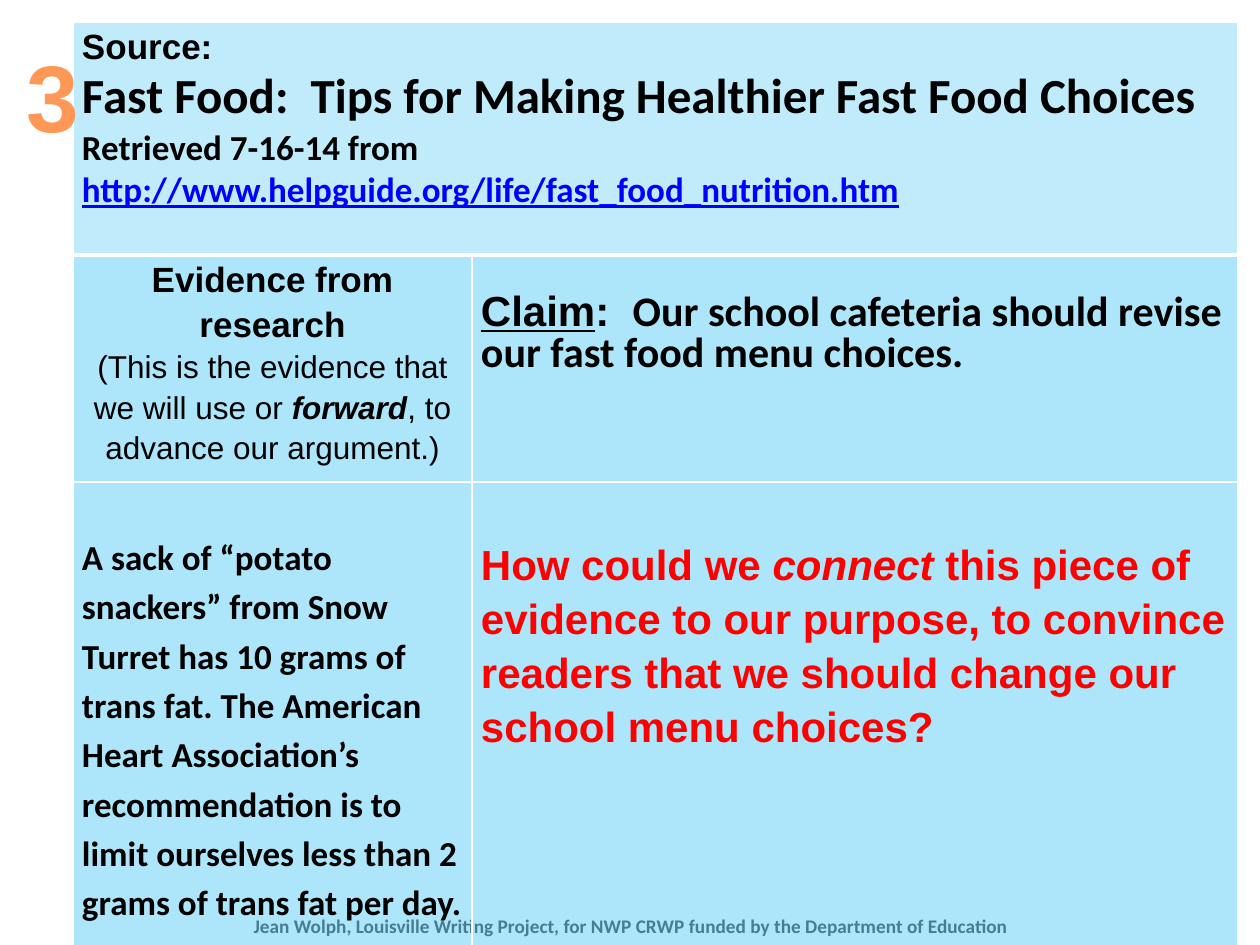
from dataclasses import dataclass

from lxml import etree
from pptx import Presentation
from pptx.dml.color import RGBColor
from pptx.enum import text
from pptx.oxml import ns
from pptx.util import Emu, Pt

PX_PER_INCH = 126
BLACK, WHITE, RED, LINK_BLUE = "000000", "FFFFFF", "FF0000", "0000FF"
SKY, GREY, ORANGE = "00B0F0", "666666", "FF9856"
CENTER, LEFT = text.PP_ALIGN.CENTER, text.PP_ALIGN.LEFT


@dataclass
class Run:
    words: str
    size: int
    font: str = "Arial"
    color: str = BLACK
    bold: bool = True
    italic: bool = False
    underline: bool = False


@dataclass
class Para:
    runs: list[Run]
    align: text.PP_ALIGN = LEFT
    spacing: float = 1.0


@dataclass
class CellSpec:
    row: int
    column: int
    paragraphs: list[Para]
    top_margin: int = 0
    opacity: int = 32
    bottom_line: int = 1


def px(length: int) -> Emu:
    return Emu(round(length * 914400 / PX_PER_INCH))


def rgb(color: str) -> RGBColor:
    return RGBColor.from_string(color)


def write(text_frame, paragraphs: list[Para]) -> None:
    text_frame.word_wrap = True
    for index, item in enumerate(paragraphs):
        paragraph = text_frame.paragraphs[0] if index == 0 else text_frame.add_paragraph()
        paragraph.alignment = item.align
        paragraph.line_spacing = item.spacing
        for part in item.runs:
            run = paragraph.add_run()
            run.text = part.words
            font = run.font
            font.name, font.size = part.font, Pt(part.size)
            font.bold, font.italic, font.underline = part.bold, part.italic, part.underline
            font.color.rgb = rgb(part.color)


def add_text(slide, box: tuple[int, int, int, int], paragraph: Para, inset: int | None = None) -> None:
    text_frame = slide.shapes.add_textbox(*map(px, box)).text_frame
    if inset is not None:
        text_frame.margin_left = text_frame.margin_right = px(inset)
        text_frame.margin_top = text_frame.margin_bottom = px(inset)
    write(text_frame, [paragraph])


def set_borders(cell, bottom_line: int) -> None:
    properties = cell._tc.get_or_add_tcPr()
    widths = {"a:lnL": 1, "a:lnR": 1, "a:lnT": 1, "a:lnB": bottom_line}
    for position, (tag, width) in enumerate(widths.items()):
        line = etree.Element(ns.qn(tag), w=str(Pt(width)))
        fill = etree.SubElement(line, ns.qn("a:solidFill"))
        etree.SubElement(fill, ns.qn("a:srgbClr"), val=WHITE)
        properties.insert(position, line)


def style_cell(cell, opacity: int, bottom_line: int) -> None:
    cell.margin_left = cell.margin_right = px(9)
    cell.margin_top = cell.margin_bottom = 0
    cell.fill.solid()
    cell.fill.fore_color.rgb = rgb(SKY)
    color = cell._tc.tcPr.find(".//" + ns.qn("a:srgbClr"))
    etree.SubElement(color, ns.qn("a:alpha"), val=str(opacity * 1000))
    set_borders(cell, bottom_line)


CELLS = [
    # Source
    CellSpec(0, 0, [
        Para([Run("Source:", 20)], spacing=1.15),
        Para([Run("Fast Food:  Tips for Making Healthier Fast Food Choices", 28, "Calibri")]),
        Para([Run("Retrieved 7-16-14 from ", 20, "Calibri"),
              Run("http://www.helpguide.org/life/fast_food_nutrition.htm", 20, "Calibri",
                  LINK_BLUE, underline=True)]),
    ], opacity=25, bottom_line=3),
    # Column headings
    CellSpec(1, 0, [
        Para([Run("Evidence from research", 20)], CENTER, 1.15),
        Para([Run("(This is the evidence that we will use or ", 18, bold=False),
              Run("forward", 18, italic=True),
              Run(", to advance our argument.)", 18, bold=False)], CENTER, 1.15),
    ]),
    CellSpec(1, 1, [
        Para([Run("Claim", 24, underline=True), Run(":  ", 24),
              Run("Our school cafeteria should revise our fast food menu choices.", 24, "Calibri")],
             spacing=0.8),
    ], top_margin=39),
    # Evidence and question
    CellSpec(2, 0, [
        Para([Run("A sack of “potato snackers” from Snow Turret has 10 grams of trans fat. "
                  "The American Heart Association’s recommendation is to limit ourselves "
                  "less than 2 grams of trans fat per day.", 20, "Calibri")], spacing=1.15),
    ], top_margin=49),
    CellSpec(2, 1, [
        Para([Run("How could we ", 24, color=RED), Run("connect", 24, color=RED, italic=True),
              Run(" this piece of evidence to our purpose, to convince readers that we should "
                  "change our school menu choices?", 24, color=RED)], spacing=1.15),
    ], top_margin=54),
]


def add_evidence_table(slide) -> None:
    columns, rows = [399, 766], [233, 226, 464]
    frame = slide.shapes.add_table(len(rows), len(columns), px(73), px(22),
                                   px(sum(columns)), px(sum(rows)))
    table = frame.table
    table.first_row = table.horz_banding = False
    for column, width in zip(table.columns, columns):
        column.width = px(width)
    for row, height in zip(table.rows, rows):
        row.height = px(height)
    table.cell(0, 0).merge(table.cell(0, 1))
    for item in CELLS:
        cell = table.cell(item.row, item.column)
        style_cell(cell, item.opacity, item.bottom_line)
        cell.margin_top = px(item.top_margin)
        write(cell.text_frame, item.paragraphs)


def main() -> None:
    presentation = Presentation()
    presentation.slide_width, presentation.slide_height = px(1260), px(945)
    slide = presentation.slides.add_slide(presentation.slide_layouts[6])

    # Footer, seen through the table
    add_text(slide, (130, 903, 1002, 42), Para([
        Run("Jean Wolph, Louisville Writing Project, for NWP CRWP funded by the "
            "Department of Education", 11, "Calibri", GREY)], CENTER), inset=13)
    add_evidence_table(slide)
    # Step number
    add_text(slide, (14, 32, 49, 127), Para([Run("3", 54, color=ORANGE)], CENTER))

    presentation.save("out.pptx")


if __name__ == "__main__":
    main()
